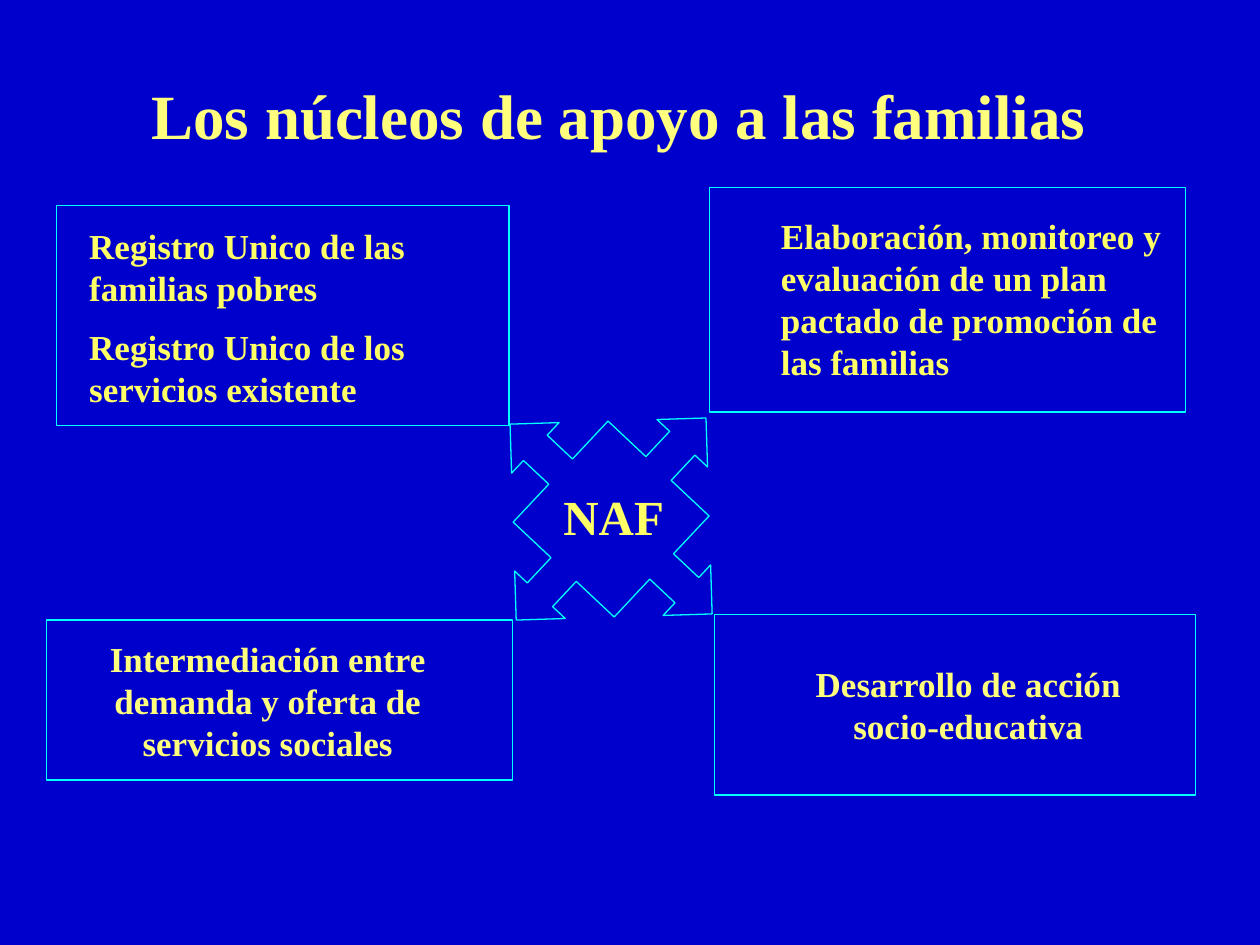
from dataclasses import dataclass

from pptx import Presentation
from pptx.dml.color import RGBColor
from pptx.enum.shapes import MSO_SHAPE
from pptx.enum.text import MSO_ANCHOR, PP_ALIGN
from pptx.shapes.autoshape import Shape
from pptx.slide import Slide
from pptx.util import Inches, Pt

BLUE = RGBColor(0x00, 0x00, 0xCC)
CYAN = RGBColor(0x00, 0xFF, 0xFF)
PALE_YELLOW = RGBColor(0xFF, 0xFF, 0x7D)
YELLOW = RGBColor(0xFF, 0xFF, 0x66)
FONT = "Times New Roman"


@dataclass(frozen=True)
class Box:
    left: float
    top: float
    width: float
    height: float

    def lengths(self) -> tuple[Inches, Inches, Inches, Inches]:
        return Inches(self.left), Inches(self.top), Inches(self.width), Inches(self.height)


@dataclass(frozen=True)
class Label:
    box: Box
    paragraphs: tuple[str, ...]
    color: RGBColor = YELLOW
    size: int = 20
    alignment: PP_ALIGN = PP_ALIGN.LEFT
    anchor: MSO_ANCHOR = MSO_ANCHOR.TOP


LABELS = (
    Label(Box(0.66, 0.28, 8.5, 1.25), ("Los núcleos de apoyo a las familias",),
          PALE_YELLOW, 36, PP_ALIGN.CENTER, MSO_ANCHOR.MIDDLE),
    Label(Box(0.59, 5.01, 3.07, 1.1),
          ("Intermediación entre demanda y oferta de servicios sociales",),
          PALE_YELLOW, alignment=PP_ALIGN.CENTER),
    Label(Box(6.22, 5.21, 2.93, 0.77), ("Desarrollo de acción socio-educativa",),
          PALE_YELLOW, alignment=PP_ALIGN.CENTER),
    Label(Box(0.61, 1.73, 3.26, 2.1),
          ("Registro Unico de las familias pobres",
           "Registro Unico de los servicios existente")),
    Label(Box(6.1, 1.65, 3.26, 1.93),
          ("Elaboración, monitoreo y evaluación de un plan pactado "
           "de promoción de las familias",)),
)
CENTER_LABEL = Label(Box(4.31, 3.81, 1.12, 0.57), ("NAF",), size=28,
                     alignment=PP_ALIGN.CENTER)
ARROWS = Box(3.75, 3.02, 2.2, 2.2)
ARROW_ADJUSTMENTS = (0.125, 0.125, 0.125, 0.5)
FRAMES = (
    Box(0.45, 1.63, 3.59, 1.75),
    Box(5.63, 1.49, 3.78, 1.78),
    Box(0.37, 4.92, 3.7, 1.27),
    Box(5.67, 4.88, 3.82, 1.43),
)


def add_label(slide: Slide, label: Label) -> None:
    text_frame = slide.shapes.add_textbox(*label.box.lengths()).text_frame
    text_frame.word_wrap = True
    text_frame.vertical_anchor = label.anchor
    text_frame.text = "\n".join(label.paragraphs)
    for index, paragraph in enumerate(text_frame.paragraphs):
        paragraph.alignment = label.alignment
        if index:
            paragraph.space_before = Pt(label.size / 2)
        for run in paragraph.runs:
            run.font.name = FONT
            run.font.size = Pt(label.size)
            run.font.bold = True
            run.font.color.rgb = label.color


def add_outline(slide: Slide, preset: MSO_SHAPE, box: Box) -> Shape:
    shape = slide.shapes.add_shape(preset, *box.lengths())
    shape.shadow.inherit = False
    shape.fill.background()
    shape.line.color.rgb = CYAN
    shape.line.width = Pt(0.75)
    return shape


def add_arrows(slide: Slide) -> None:
    arrows = add_outline(slide, MSO_SHAPE.QUAD_ARROW_CALLOUT, ARROWS)
    arrows.rotation = 43.2
    for index, value in enumerate(ARROW_ADJUSTMENTS):
        arrows.adjustments[index] = value


def main() -> None:
    """Build the slide on family support centres and save it."""
    presentation = Presentation()
    presentation.slide_width = Inches(10)
    presentation.slide_height = Inches(7.5)
    slide = presentation.slides.add_slide(presentation.slide_layouts[6])
    slide.background.fill.solid()
    slide.background.fill.fore_color.rgb = BLUE
    for label in LABELS:
        add_label(slide, label)
    add_arrows(slide)
    add_label(slide, CENTER_LABEL)
    for frame in FRAMES:
        add_outline(slide, MSO_SHAPE.RECTANGLE, frame)
    presentation.save("out.pptx")


if __name__ == "__main__":
    main()
